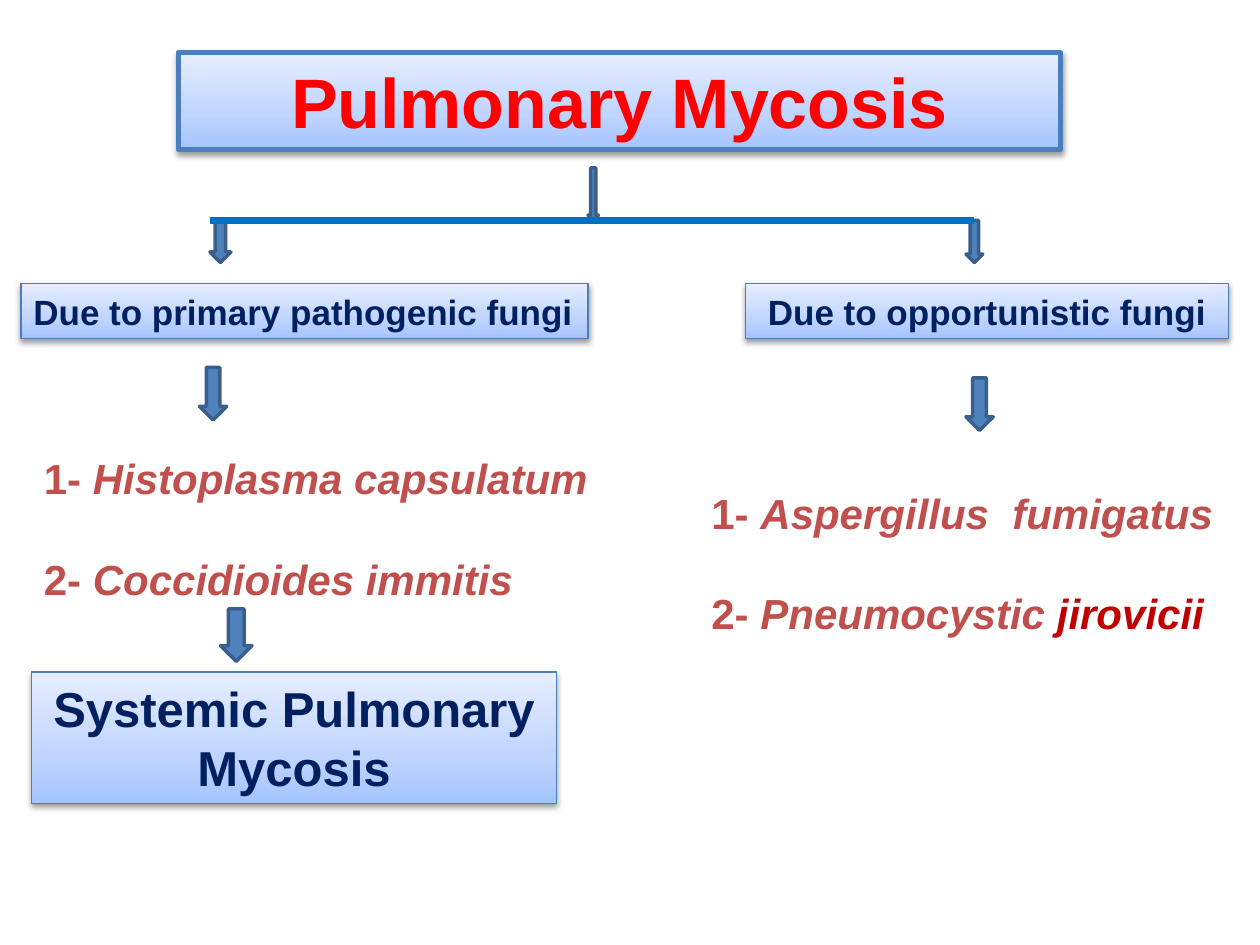
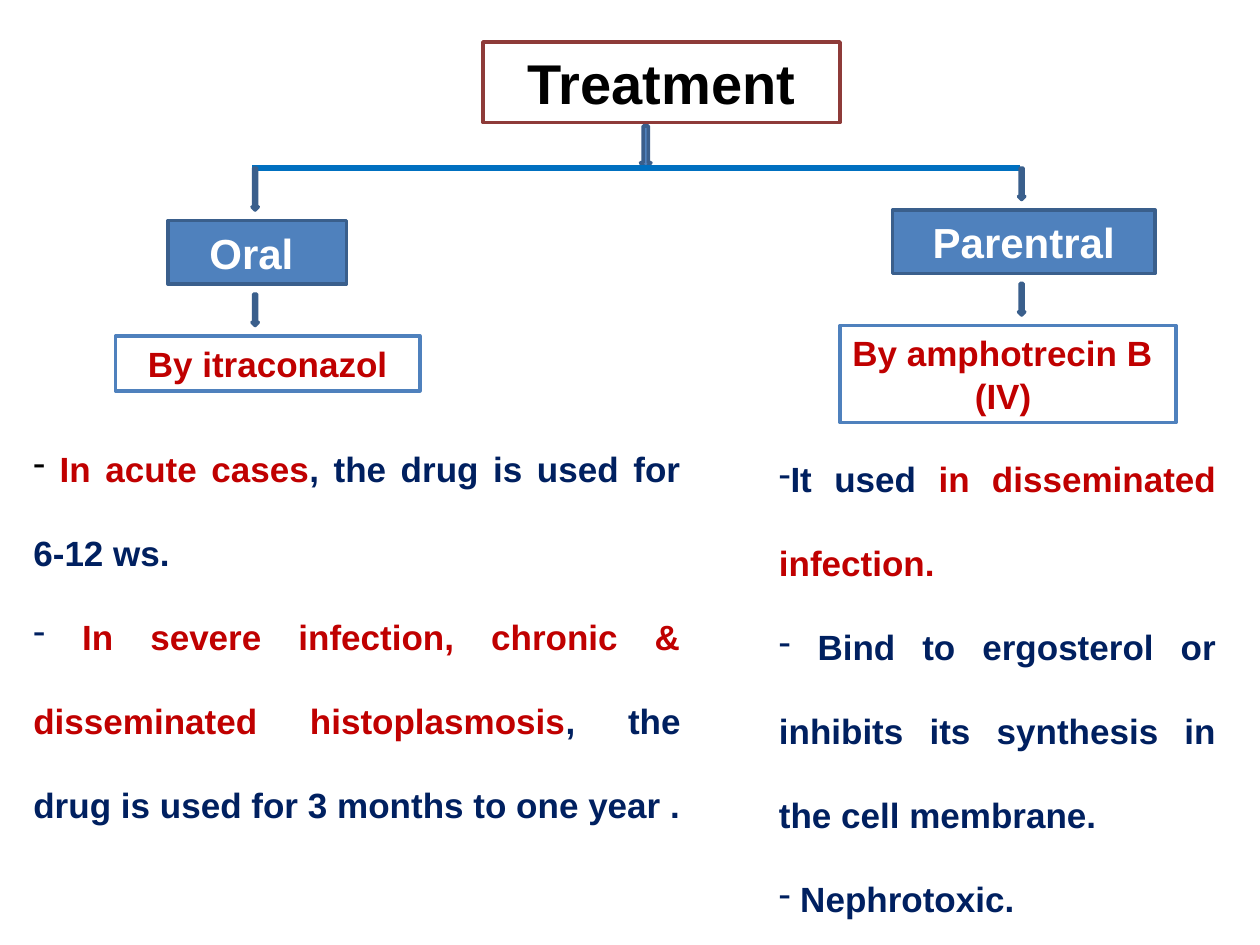
import copy
from dataclasses import dataclass

import pptx
import pptx.util
from lxml import etree
from pptx.dml.color import RGBColor
from pptx.enum.shapes import MSO_CONNECTOR, MSO_SHAPE
from pptx.enum.text import MSO_AUTO_SIZE, PP_ALIGN
from pptx.oxml.ns import qn


@dataclass(frozen=True)
class Theme:
    font: str = "Arial"
    black: str = "000000"
    white: str = "FFFFFF"
    red: str = "FF0000"
    crimson: str = "C00000"
    brick: str = "C0504D"
    brick_edge: str = "8E3B39"
    navy: str = "002060"
    blue: str = "4F81BD"
    blue_edge: str = "3A5F8C"
    pale_edge: str = "4B7EBC"
    branch: str = "0070C0"
    pale: tuple = ((0, "A4C4FF"), (0.35, "BFD4FF"), (1, "E6EEFF"))
    banner: int = 40
    heading: int = 32
    result: int = 28
    large: int = 24
    body: int = 20


T = Theme()
COLS, ROWS = 120, 90
CELL = pptx.util.Inches(10) // COLS


def cells(*counts):
    """Turn counts of grid columns or rows into lengths."""
    return [pptx.util.Emu(round(n * CELL)) for n in counts]


def style_run(r, size, color, italic=False):
    r.font.name = T.font
    r.font.size = pptx.util.Pt(size)
    r.font.bold = True
    r.font.italic = italic
    r.font.color.rgb = RGBColor.from_string(color)


def fill_gradient(sp, stops):
    """Fill from bottom to top with any number of (position, colour) stops."""
    sp.fill.gradient()
    sp.fill.gradient_angle = 90
    gs_list = sp._element.spPr.find(qn("a:gradFill")).find(qn("a:gsLst"))
    while len(gs_list) < len(stops):
        gs_list.append(copy.deepcopy(gs_list[0]))
    for stop, (position, color) in zip(sp.fill.gradient_stops, stops):
        stop.position = position
        stop.color.rgb = RGBColor.from_string(color)


def add_soft_shadow(sp):
    effects = sp._element.spPr.find(qn("a:effectLst"))
    shadow = etree.SubElement(effects, qn("a:outerShdw"), blurRad="40000", dist="20000",
                              dir="5400000", rotWithShape="0")
    color = etree.SubElement(shadow, qn("a:srgbClr"), val=T.black)
    etree.SubElement(color, qn("a:alpha"), val="38000")


def add_preset(s, preset, place, fill, edge, weight):
    sp = s.shapes.add_shape(preset, *cells(*place))
    sp.shadow.inherit = False
    if fill is None:
        sp.fill.background()
    elif isinstance(fill, tuple):
        fill_gradient(sp, fill)
        add_soft_shadow(sp)
    else:
        sp.fill.solid()
        sp.fill.fore_color.rgb = RGBColor.from_string(fill)
    sp.line.color.rgb = RGBColor.from_string(edge)
    sp.line.width = pptx.util.Pt(weight)
    return sp


def add_box(s, place, text, size, color, fill=T.pale, edge=T.pale_edge, weight=0.75,
            first_align=PP_ALIGN.CENTER):
    sp = add_preset(s, MSO_SHAPE.RECTANGLE, place, fill, edge, weight)
    tf = sp.text_frame
    tf.word_wrap = True
    tf.auto_size = MSO_AUTO_SIZE.SHAPE_TO_FIT_TEXT
    tf.text = text
    for p in tf.paragraphs:
        p.alignment = PP_ALIGN.CENTER
        for r in p.runs:
            style_run(r, size, color)
    tf.paragraphs[0].alignment = first_align


def add_down_arrow(s, *place):
    add_preset(s, MSO_SHAPE.DOWN_ARROW, place, T.blue, T.blue_edge, 2)


def add_branches(s, left, stem, right, row, weight):
    """Draw a level line from the stem to each side."""
    for end in (right, left):
        line = s.shapes.add_connector(MSO_CONNECTOR.STRAIGHT, *cells(stem, row, end, row))
        line.line.color.rgb = RGBColor.from_string(T.branch)
        line.line.width = pptx.util.Pt(weight)
        etree.SubElement(line._element.spPr, qn("a:effectLst"))


def add_list(s, place, items, size, dashed=False, inset=1.2):
    """Add double-spaced items, each a list of (text, colour, italic) runs."""
    tf = s.shapes.add_textbox(*cells(*place)).text_frame
    tf.word_wrap = True
    tf.auto_size = MSO_AUTO_SIZE.SHAPE_TO_FIT_TEXT
    tf.margin_left = cells(inset)[0]
    for i, item in enumerate(items):
        p = tf.add_paragraph() if i else tf.paragraphs[0]
        p.line_spacing = 2.0
        if dashed:
            p.alignment = PP_ALIGN.JUSTIFY
            pPr = p._p.get_or_add_pPr()
            etree.SubElement(pPr, qn("a:buFontTx"))
            etree.SubElement(pPr, qn("a:buChar"), char="-")
        for text, *style in item:
            r = p.add_run()
            r.text = text
            style_run(r, size, *style)


def build_mycosis(s):
    add_box(s, (17, 5, 84, 9.24), "Pulmonary Mycosis", T.banner, T.red, weight=3)
    add_down_arrow(s, 56, 16, 1, 5)
    add_down_arrow(s, 92, 21, 1.6, 4)
    add_down_arrow(s, 20, 21, 2, 4)
    add_branches(s, 20, 56.5, 92.8, 21, 4.5)

    add_box(s, (2, 27, 54, 5.24), "Due to primary pathogenic fungi", T.body, T.navy,
            first_align=PP_ALIGN.LEFT)
    add_box(s, (71, 27, 46, 5.24), "Due to opportunistic fungi", T.body, T.navy)
    add_down_arrow(s, 19, 35, 2.6, 5)
    add_down_arrow(s, 92, 36, 2.6, 5)

    add_list(s, (3, 37.7, 57, 19), [
        [("1- ", T.brick), ("Histoplasma capsulatum", T.brick, True)],
        [("2- ", T.brick), ("Coccidioides immitis", T.brick, True)],
    ], T.large)
    add_list(s, (61, 41, 56, 20.4), [
        [("1- ", T.brick), ("Aspergillus  fumigatus", T.brick, True)],
        [("2- ", T.brick), ("Pneumocystic ", T.brick, True), ("jirovicii", T.crimson, True)],
    ], T.large, inset=6.75)
    add_down_arrow(s, 21, 58, 3, 5)
    add_box(s, (3, 64, 50, 12.5), "Systemic Pulmonary Mycosis", T.result, T.navy)


def build_treatment(s):
    add_box(s, (46, 4, 34, 7.68), "Treatment", T.heading, T.black,
            fill=None, edge=T.brick_edge, weight=2)
    add_down_arrow(s, 61, 12, 1, 4)
    add_branches(s, 24, 61.5, 97.1, 16, 3)

    routes = (
        (24, 4, (16, 21, 17, 6.06), "Oral ", 28),
        (97, 3, (85, 20, 25, 6.06), "Parentral", 27),
    )
    for col, drop, place, route, next_row in routes:
        add_down_arrow(s, col, 16, 0.6, drop)
        add_box(s, place, route, T.large, T.white, fill=T.blue, edge=T.blue_edge, weight=2)
        add_down_arrow(s, col, next_row, 0.6, 3)

    drug_style = dict(size=T.body, color=T.crimson, fill=T.white, edge=T.blue, weight=2)
    add_box(s, (11, 32, 29, 5.24), "By itraconazol", **drug_style)
    add_box(s, (80, 31, 32, 9.24), "By amphotrecin B\n(IV) ", **drug_style,
            first_align=PP_ALIGN.LEFT)

    add_list(s, (2, 38, 64, 45.2), [
        [(" ", T.black), ("In acute cases", T.crimson),
         (", the drug is used for 6-12 ws. ", T.navy)],
        [(" ", T.navy),
         ("In severe infection, chronic & disseminated histoplasmosis", T.crimson),
         (", the drug is used for 3 months to one year . ", T.navy)],
    ], T.body, dashed=True)
    add_list(s, (73, 39, 44, 49.7), [
        [("It used ", T.navy), ("in disseminated infection.", T.crimson)],
        [(" Bind to ergosterol or inhibits its synthesis in the cell membrane.", T.navy)],
        [(" Nephrotoxic.", T.navy)],
    ], T.body, dashed=True)


def main():
    prs = pptx.Presentation()
    prs.slide_width, prs.slide_height = cells(COLS, ROWS)
    for build in (build_mycosis, build_treatment):
        build(prs.slides.add_slide(prs.slide_layouts[6]))
    prs.save("out.pptx")


if __name__ == "__main__":
    main()
